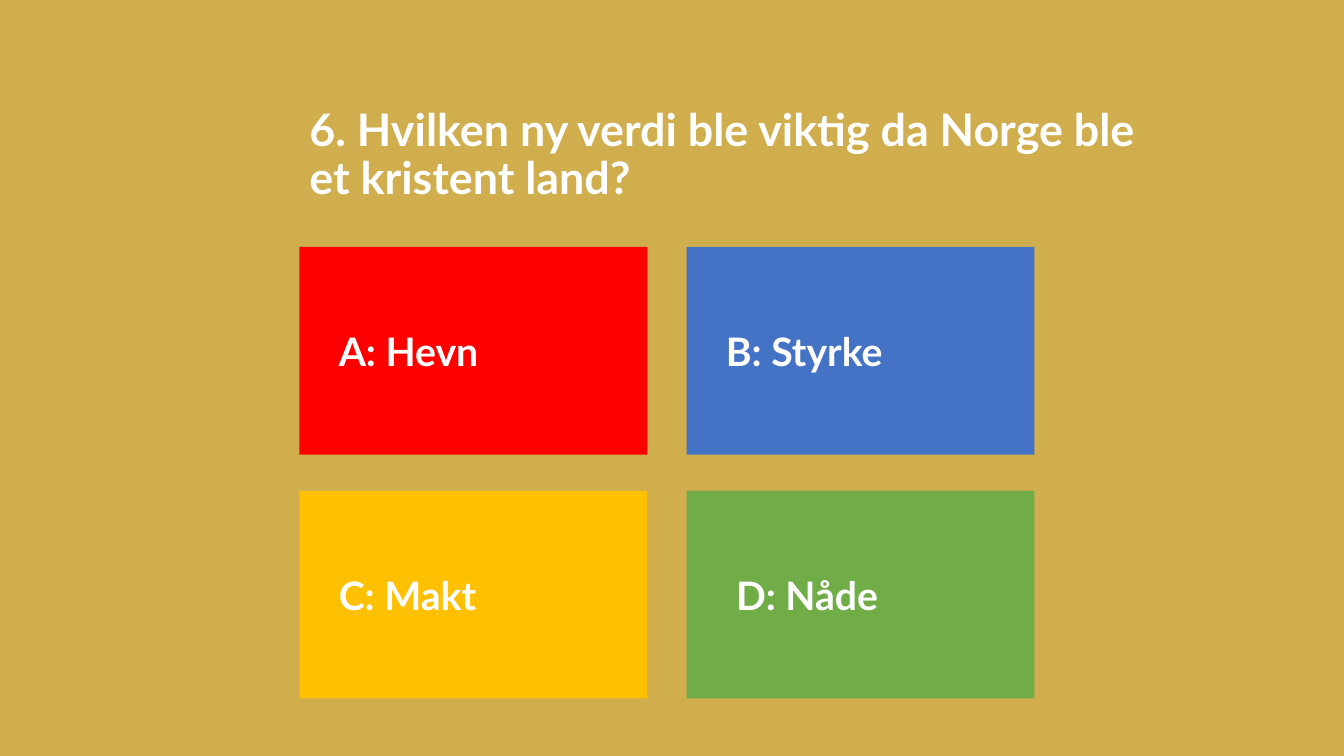
from pptx import Presentation
from pptx.dml.color import RGBColor
from pptx.enum import shapes, text
from pptx.util import Inches, Pt

GOLD = RGBColor(0xD0, 0xAE, 0x4E)
WHITE = RGBColor(0xFF, 0xFF, 0xFF)
RED = RGBColor(0xFF, 0x00, 0x00)
BLUE = RGBColor(0x44, 0x72, 0xC4)
YELLOW = RGBColor(0xFF, 0xC0, 0x00)
GREEN = RGBColor(0x70, 0xAD, 0x47)

LEFT, TOP = 2.97, 2.45
CARD_WIDTH, CARD_HEIGHT = 3.45, 2.06
COLUMN_STEP, ROW_STEP = 3.84, 2.42


def style_text(paragraph, size):
    paragraph.alignment = text.PP_ALIGN.LEFT
    for run in paragraph.runs:
        run.font.name = "Lato"
        run.font.size = Pt(size)
        run.font.bold = True
        run.font.color.rgb = WHITE


presentation = Presentation()
presentation.slide_width = Inches(13.33)
presentation.slide_height = Inches(7.5)
slide = presentation.slides.add_slide(presentation.slide_layouts[6])
slide.background.fill.solid()
slide.background.fill.fore_color.rgb = GOLD

question = slide.shapes.add_textbox(Inches(LEFT), Inches(0.95), Inches(8.69), Inches(1.13))
frame = question.text_frame
frame.word_wrap = True
frame.vertical_anchor = text.MSO_ANCHOR.BOTTOM
frame.text = "6. Hvilken ny verdi ble viktig da Norge ble et kristent land?"
frame.paragraphs[0].line_spacing = 0.9
style_text(frame.paragraphs[0], 32)

# Answers run row by row; the last inset is slightly wider.
answers = [
    ("A: Hevn", RED, 0.39),
    ("B: Styrke", BLUE, 0.39),
    ("C: Makt", YELLOW, 0.39),
    ("D: Nåde", GREEN, 0.49),
]
for index, (answer, color, inset) in enumerate(answers):
    row, column = divmod(index, 2)
    card = slide.shapes.add_shape(
        shapes.MSO_SHAPE.RECTANGLE,
        Inches(LEFT + column * COLUMN_STEP),
        Inches(TOP + row * ROW_STEP),
        Inches(CARD_WIDTH),
        Inches(CARD_HEIGHT),
    )
    card.shadow.inherit = False
    card.fill.solid()
    card.fill.fore_color.rgb = color
    card.line.fill.background()
    frame = card.text_frame
    frame.word_wrap = True
    frame.vertical_anchor = text.MSO_ANCHOR.MIDDLE
    frame.margin_left = Inches(inset)
    frame.margin_top = frame.margin_right = frame.margin_bottom = Inches(0.2)
    frame.text = answer
    style_text(frame.paragraphs[0], 28)

presentation.save("out.pptx")
